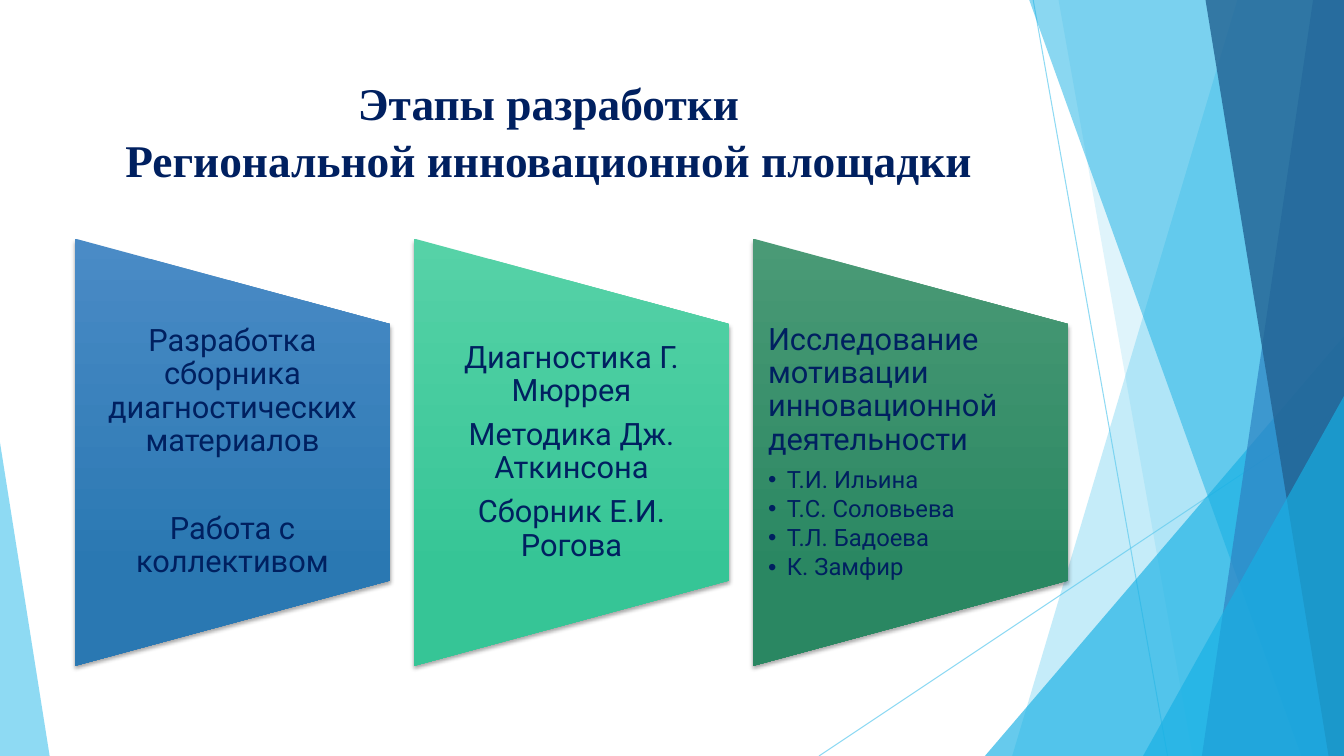
from lxml import etree
from pptx import Presentation
from pptx.dml.color import RGBColor
from pptx.enum.shapes import MSO_CONNECTOR, MSO_SHAPE
from pptx.enum.text import MSO_ANCHOR, MSO_AUTO_SIZE, PP_ALIGN
from pptx.oxml.ns import qn
from pptx.util import Pt

CENTER, LEFT = PP_ALIGN.CENTER, PP_ALIGN.LEFT
TOP, MIDDLE = MSO_ANCHOR.TOP, MSO_ANCHOR.MIDDLE
NO_AUTOFIT = MSO_AUTO_SIZE.NONE
TRIANGLE = MSO_SHAPE.ISOSCELES_TRIANGLE
TRAPEZOID = MSO_SHAPE.FLOWCHART_MANUAL_OPERATION
STRAIGHT = MSO_CONNECTOR.STRAIGHT

COLORS = {
    "sky": "5FCBEF", "cyan": "17B0E4", "blue": "2E83C3", "deep": "226292",
    "text": "002060", "shadow": "000000",
    "blue_light": "4A8BC6", "blue_dark": "2A78B2",
    "mint_light": "56D2A7", "mint_dark": "36C596",
    "green_light": "4A9A76", "green_dark": "2A8762",
}
WIDTH, HEIGHT = 960, 540
PANEL_LEFT, PANEL_STEP = 53.4, 242.2
PANEL_WIDTH, PANEL_HEIGHT, PANEL_MIDDLE = 225.3, 305.3, 323
TEXT_TOP, TEXT_HEIGHT = 231.2, 183.6


def rgb(name):
    """Return the palette colour of that name."""
    return RGBColor.from_string(COLORS[name])


def add_xml(parent, tag, **attributes):
    """Append a drawing element to the parent."""
    return etree.SubElement(parent, qn(tag), attributes)


def paint(fill, element, color, opacity):
    """Fill with a see-through colour, opacity in percent."""
    fill.solid()
    fill.fore_color.rgb = rgb(color)
    color_element = next(element.iter(qn("a:srgbClr")))
    add_xml(color_element, "a:alpha", val=str(opacity * 1000))


def finish_facet(shape, color, opacity):
    """Give a background facet its flat look."""
    shape.shadow.inherit = False
    shape.line.fill.background()
    paint(shape.fill, shape._element.spPr, color, opacity)


def add_ray(slide, start, end):
    """Draw a thin background line."""
    ray = slide.shapes.add_connector(STRAIGHT, *map(Pt, start + end))
    ray.line.width = Pt(0.75)
    paint(ray.line.fill, ray._element.spPr, "sky", 70)
    add_xml(ray._element.spPr, "a:effectLst")


def add_band(slide, top_left, bottom_left, color, opacity):
    """Draw a slanted band that reaches the right edge."""
    top = -0.6
    builder = slide.shapes.build_freeform(Pt(top_left), Pt(top))
    corners = [(WIDTH, top), (WIDTH, HEIGHT), (bottom_left, HEIGHT)]
    builder.add_line_segments([(Pt(x), Pt(y)) for x, y in corners])
    finish_facet(builder.convert_to_shape(), color, opacity)


def add_triangle(slide, left, top, width, apex, color, opacity):
    """Draw a right triangle standing on the bottom edge."""
    shape = slide.shapes.add_shape(
        TRIANGLE, Pt(left), Pt(top), Pt(width), Pt(HEIGHT - top))
    shape.adjustments[0] = apex
    finish_facet(shape, color, opacity)


def add_background(slide):
    """Draw the facets from back to front."""
    add_ray(slide, (738, 0), (834, HEIGHT))
    add_ray(slide, (WIDTH, 290), (585, HEIGHT))
    add_band(slide, 884, 723, "sky", 36)
    add_band(slide, 756, 852, "sky", 20)
    add_triangle(slide, 703.5, 240, 256.5, 1, "cyan", 66)
    add_band(slide, 735, 929.5, "cyan", 50)
    add_band(slide, 938, 858.5, "blue", 70)
    add_band(slide, 861, 949, "deep", 80)
    add_triangle(slide, 816.5, 283, 143.5, 1, "cyan", 66)
    add_triangle(slide, 0, 316, 35.5, 0, "sky", 70)


def add_panel(slide, left, light, dark):
    """Draw a gradient trapezoid with its wide side on the left."""
    shape = slide.shapes.add_shape(
        TRAPEZOID, Pt(left + (PANEL_WIDTH - PANEL_HEIGHT) / 2),
        Pt(PANEL_MIDDLE - PANEL_WIDTH / 2), Pt(PANEL_HEIGHT), Pt(PANEL_WIDTH))
    shape.rotation = 270
    shape.line.fill.background()
    shape.fill.gradient()
    shape.fill.gradient_angle = 270
    for stop, position, color in zip(
            shape.fill.gradient_stops, (0, 0.78), (light, dark)):
        stop.position = position
        stop.color.rgb = rgb(color)
    properties = shape._element.spPr
    properties.find(qn("a:gradFill")).set("rotWithShape", "0")
    shape.shadow.inherit = False
    shadow = add_xml(
        properties.find(qn("a:effectLst")), "a:outerShdw", blurRad=str(Pt(3)),
        dist=str(Pt(2)), dir="5400000", rotWithShape="0")
    color = add_xml(shadow, "a:srgbClr", val=COLORS["shadow"])
    add_xml(color, "a:alpha", val="35000")


def set_frame(shape, box, anchor, side, edge):
    """Place a text shape and set its margins."""
    shape.left, shape.top, shape.width, shape.height = map(Pt, box)
    frame = shape.text_frame
    frame.auto_size = NO_AUTOFIT
    frame.word_wrap = True
    frame.vertical_anchor = anchor
    frame.margin_left = frame.margin_right = Pt(side)
    frame.margin_top = frame.margin_bottom = Pt(edge)
    return frame


def write(frame, text, size=22, font="Roboto", bold=False, align=CENTER,
          spacing=0.9, after=7.7, bullet=False):
    """Write one formatted paragraph into the frame."""
    first = frame.paragraphs[0]
    paragraph = frame.add_paragraph() if first.text else first
    paragraph.text = text
    paragraph.alignment = align
    paragraph.line_spacing = spacing
    paragraph.space_before, paragraph.space_after = Pt(0), Pt(after)
    paragraph.level = int(bullet)
    indent = Pt(13.5) if bullet else 0
    properties = paragraph._p.get_or_add_pPr()
    properties.set("marL", str(indent))
    properties.set("indent", str(-indent))
    if bullet:
        add_xml(properties, "a:buChar", char="•")
    else:
        add_xml(properties, "a:buNone")
    for run in paragraph.runs:
        run.font.size, run.font.name, run.font.bold = Pt(size), font, bold
        run.font.color.rgb = rgb("text")


def main():
    """Build and save the slide."""
    presentation = Presentation()
    presentation.slide_width, presentation.slide_height = Pt(WIDTH), Pt(HEIGHT)
    slide = presentation.slides.add_slide(presentation.slide_layouts[1])
    add_background(slide)

    title = set_frame(slide.shapes.title, (53.4, 48, 677, 104), TOP, 7.2, 3.6)
    write(title, "Этапы разработки\vРегиональной инновационной площадки",
          size=32.4, font="Times New Roman", bold=True, spacing=1.05, after=0)

    lefts = [PANEL_LEFT + PANEL_STEP * index for index in range(3)]
    for left, tone in zip(lefts, ("blue", "mint", "green")):
        add_panel(slide, left, f"{tone}_light", f"{tone}_dark")

    columns = [
        [("Разработка сборника диагностических материалов", 39),
         ("Работа с коллективом", 7.7)],
        [("Диагностика Г. Мюррея", 7.7), ("Методика Дж. Аткинсона", 7.7),
         ("Сборник Е.И. Рогова", 7.7)],
    ]
    for left, column in zip(lefts, columns):
        box = (left, TEXT_TOP, PANEL_WIDTH, TEXT_HEIGHT)
        frame = set_frame(slide.shapes.add_textbox(*map(Pt, box)),
                          box, MIDDLE, 10.8, 0)
        for text, after in column:
            write(frame, text, after=after)

    body = slide.placeholders[1]
    body._element.getparent().append(body._element)
    frame = set_frame(body, (lefts[2], TEXT_TOP, PANEL_WIDTH, TEXT_HEIGHT),
                      TOP, 10.8, 0)
    write(frame, "Исследование мотивации инновационной деятельности",
          align=LEFT)
    for author in ("Т.И. Ильина", "Т.С. Соловьева", "Т.Л. Бадоева", "К. Замфир"):
        write(frame, author, size=17, align=LEFT, after=2.55, bullet=True)

    presentation.save("out.pptx")


if __name__ == "__main__":
    main()
